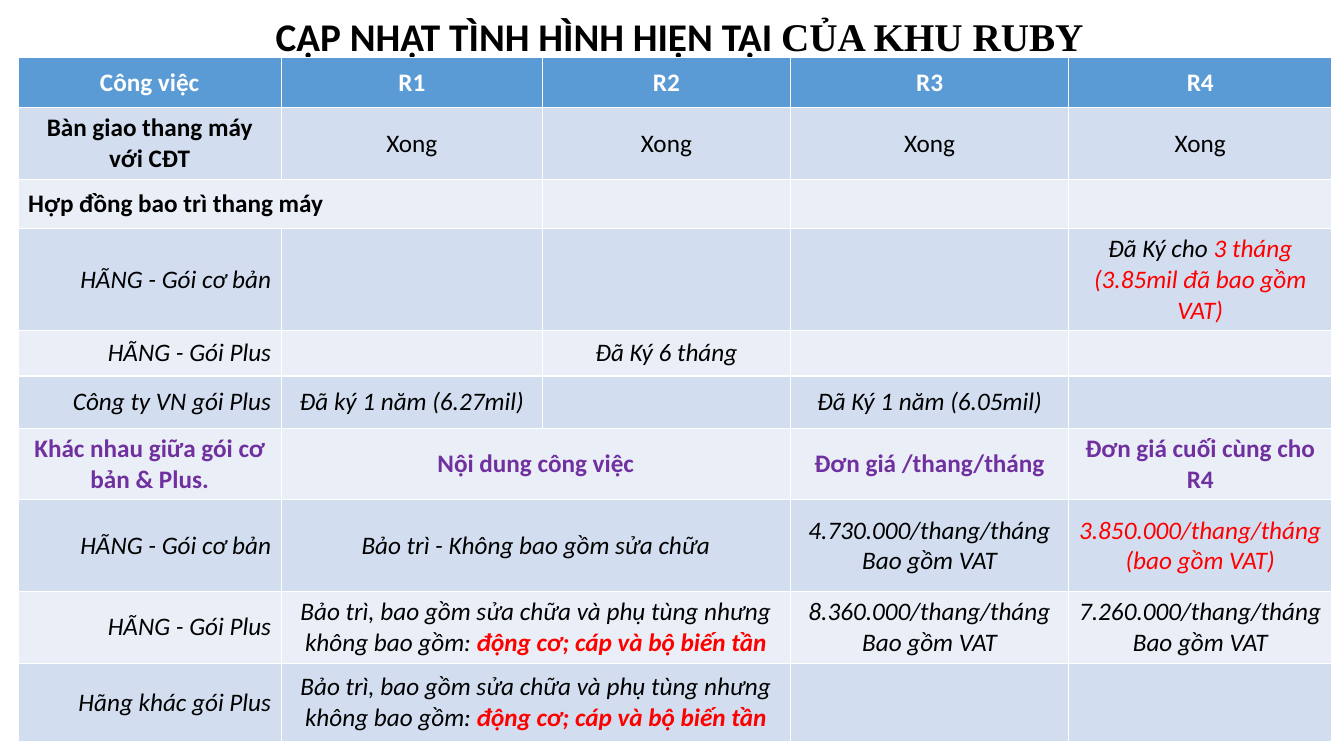
from dataclasses import dataclass

from pptx import Presentation
from pptx.dml.color import RGBColor
from pptx.enum.text import MSO_ANCHOR, PP_ALIGN
from pptx.util import Inches, Pt

LEFT, CENTER, RIGHT = PP_ALIGN.LEFT, PP_ALIGN.CENTER, PP_ALIGN.RIGHT
MIDDLE = MSO_ANCHOR.MIDDLE


@dataclass(frozen=True)
class Theme:
    sans: str = "Calibri"
    serif: str = "Times New Roman"
    title: int = 28
    body: int = 18
    black: str = "000000"
    white: str = "FFFFFF"
    red: str = "FF0000"
    purple: str = "7030A0"
    head: str = "5B9BD5"
    bands: tuple = ("EAEFF7", "D2DEEF")


@dataclass(frozen=True)
class Style:
    align: int = CENTER
    color: str = Theme.black
    bold: bool = False
    italic: bool = False
    strong: bool = False


THEME = Theme()
HEAD = Style(color=THEME.white, bold=True)
BOLD = Style(bold=True)
GROUP = Style(align=LEFT, bold=True)
PLAIN = Style()
ITEM = Style(align=RIGHT, italic=True)
NOTE = Style(italic=True)
SCOPE = Style(italic=True, strong=True)
MARK = Style(color=THEME.purple, bold=True)

COLS = (2.61, 2.59, 2.46, 2.76, 2.61)
ROWS = (0.5, 0.71, 0.49, 1.01, 0.45, 0.52, 0.71, 0.91, 0.71, 0.78)
SPANS = ((2, 0), (6, 1), (7, 1), (8, 1), (9, 1))

BASIC = "HÃNG - Gói cơ bản"
PLUS = "HÃNG - Gói Plus"
REPAIR = ("Bảo trì, bao gồm sửa chữa và phụ tùng nhưng không bao gồm: "
          "|động cơ; cáp và bộ biến tần")

GRID = (
    (HEAD, HEAD, ("Công việc", "R1", "R2", "R3", "R4")),
    (BOLD, PLAIN, ("Bàn giao thang máy với CĐT",) + ("Xong",) * 4),
    (GROUP, PLAIN, ("Hợp đồng bao trì thang máy", "", "", "", "")),
    (ITEM, NOTE, (BASIC, "", "", "",
                  "Đã Ký cho |3 tháng\n|(3.85mil đã bao gồm VAT)")),
    (ITEM, NOTE, (PLUS, "", "Đã Ký 6 tháng", "", "")),
    (ITEM, NOTE, ("Công ty VN gói Plus", "Đã ký 1 năm (6.27mil)", "",
                  "Đã Ký 1 năm (6.05mil)", "")),
    (MARK, MARK, ("Khác nhau giữa gói cơ bản & Plus.", "Nội dung công việc", "",
                  "Đơn giá /thang/tháng", "Đơn giá cuối cùng cho R4")),
    (ITEM, NOTE, (BASIC, "Bảo trì - Không bao gồm sửa chữa", "",
                  "4.730.000/thang/tháng\nBao gồm VAT",
                  "|3.850.000/thang/tháng (bao gồm VAT)")),
    (ITEM, SCOPE, (PLUS, REPAIR, "", "8.360.000/thang/tháng\nBao gồm VAT",
                   "7.260.000/thang/tháng\nBao gồm VAT")),
    (ITEM, SCOPE, ("Hãng khác gói Plus", REPAIR, "", "", "")),
)


def rgb(code):
    return RGBColor.from_string(code)


def add_run(para, text, color, bold):
    run = para.add_run()
    run.text = text
    run.font.color.rgb = rgb(color)
    run.font.bold = bold


def fill_line(para, line, style):
    para.alignment = style.align
    para.font.name = THEME.sans
    para.font.size = Pt(THEME.body)
    para.font.italic = style.italic
    text, _, alert = line.partition("|")
    if text:
        add_run(para, text, style.color, style.bold)
    if alert:
        add_run(para, alert, THEME.red, style.bold or style.strong)


def fill_cell(cell, text, style, color):
    cell.fill.solid()
    cell.fill.fore_color.rgb = rgb(color)
    cell.vertical_anchor = MIDDLE
    frame = cell.text_frame
    for i, line in enumerate(text.split("\n")):
        para = frame.add_paragraph() if i else frame.paragraphs[0]
        fill_line(para, line, style)


def add_title(slide):
    box = slide.shapes.add_textbox(Inches(0.78), Inches(-0.12),
                                   Inches(11.92), Inches(0.88))
    frame = box.text_frame
    frame.word_wrap = True
    frame.vertical_anchor = MIDDLE
    para = frame.paragraphs[0]
    para.alignment = CENTER
    para.line_spacing = 1.15
    para.space_before = para.space_after = Pt(6)
    para.font.size = Pt(THEME.title)
    para.font.bold = True
    para.font.color.rgb = rgb(THEME.black)
    parts = (("CẬP NHẬT TÌNH HÌNH HIỆN TẠI ", THEME.sans),
             ("CỦA KHU RUBY", THEME.serif))
    for text, face in parts:
        run = para.add_run()
        run.text = text
        run.font.name = face


def add_grid(slide):
    table = slide.shapes.add_table(
        len(ROWS), len(COLS), Inches(0.18), Inches(0.57),
        Inches(sum(COLS)), Inches(sum(ROWS))).table
    for col, width in zip(table.columns, COLS):
        col.width = Inches(width)
    for row, height in zip(table.rows, ROWS):
        row.height = Inches(height)
    for r, (first, rest, texts) in enumerate(GRID):
        color = THEME.bands[r % 2] if r else THEME.head
        for c, text in enumerate(texts):
            fill_cell(table.cell(r, c), text, rest if c else first, color)
    for r, c in SPANS:
        table.cell(r, c).merge(table.cell(r, c + 1))


def main():
    deck = Presentation()
    deck.slide_width = Inches(13.33)
    deck.slide_height = Inches(7.5)
    slide = deck.slides.add_slide(deck.slide_layouts[6])
    add_title(slide)
    add_grid(slide)
    deck.save("out.pptx")


if __name__ == "__main__":
    main()
